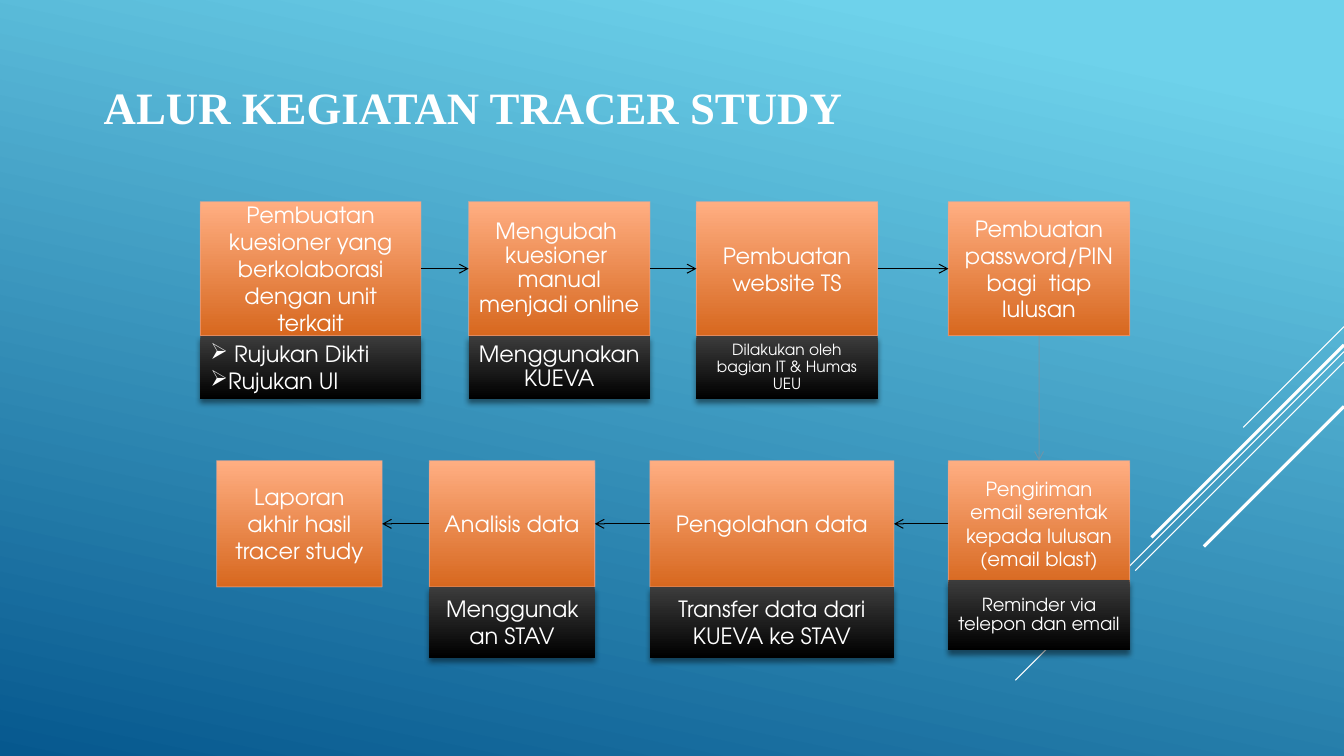
"""Build the slide showing the flow of tracer study activities."""
from dataclasses import dataclass
from typing import Optional

import lxml.etree
import pptx
import pptx.dml.color
import pptx.dml.fill
import pptx.enum.shapes
import pptx.enum.text
import pptx.oxml.ns
import pptx.shapes.autoshape
import pptx.shapes.connector
import pptx.slide
import pptx.util

Cm = pptx.util.Cm
Pt = pptx.util.Pt
RGBColor = pptx.dml.color.RGBColor
qn = pptx.oxml.ns.qn
Align = pptx.enum.text.PP_ALIGN

WHITE = RGBColor(0xFF, 0xFF, 0xFF)
BLACK = RGBColor(0x00, 0x00, 0x00)
CHARCOAL = RGBColor(0x3C, 0x3C, 0x3C)
PEACH = RGBColor(0xFF, 0xAE, 0x82)
ORANGE = RGBColor(0xD7, 0x68, 0x1F)
STEP_EDGE = RGBColor(0xEE, 0xA7, 0x8F)
FAINT_GREY = RGBColor(0x89, 0x91, 0x9C)
SKY = RGBColor(0x6E, 0xD2, 0xEB)
DEEP_BLUE = RGBColor(0x06, 0x58, 0x8E)

BODY_FONT = "TeX Gyre Adventor"
TITLE_FONT = "Times New Roman"
SLIDE_WIDTH = 33.87
SLIDE_HEIGHT = 19.05
TOP_SITE, LEFT_SITE, BOTTOM_SITE, RIGHT_SITE = range(4)


@dataclass(frozen=True)
class Ray:
    """A 45-degree decorative line running down from the right edge."""
    top: float
    reach: float
    weight: float


@dataclass(frozen=True)
class Note:
    """The dark label below a step."""
    lines: tuple[str, ...]
    size: float = 16
    spacing: float = 1.0
    bulleted: bool = False
    lift: float = 0


@dataclass(frozen=True)
class Step:
    """An activity with an optional note."""
    left: float
    width: float
    text: str
    size: float = 16
    spacing: float = 1.0
    note: Optional[Note] = None


@dataclass(frozen=True)
class Row:
    """A row of steps in flow order."""
    top: float
    height: float
    note_height: float
    exit_site: int
    entry_site: int
    steps: tuple[Step, ...]


RAYS = (
    Ray(8.23, 2.54, 0.75),
    Ray(8.86, 8.28, 0.75),
    Ray(9.12, 5.26, 0.75),
    Ray(8.69, 4.85, 2.25),
    Ray(10.24, 3.53, 2.25),
)

ROWS = (
    Row(5.08, 3.38, 1.6, RIGHT_SITE, LEFT_SITE, (
        Step(5.05, 5.56, "Pembuatan kuesioner yang berkolaborasi dengan unit terkait",
             note=Note((" Rujukan Dikti", "Rujukan UI"), bulleted=True)),
        Step(11.81, 4.57, "Mengubah  kuesioner  manual menjadi online", spacing=0.9,
             note=Note(("Menggunakan KUEVA",), spacing=0.9)),
        Step(17.55, 4.57, "Pembuatan website TS",
             note=Note(("Dilakukan oleh bagian IT & Humas UEU",), 11, 0.9)),
        Step(23.9, 4.57, "Pembuatan password/PIN bagi  tiap lulusan"),
    )),
    Row(11.61, 3.18, 1.78, LEFT_SITE, RIGHT_SITE, (
        Step(23.9, 4.57, "Pengiriman email serentak kepada lulusan (email blast)", 14,
             note=Note(("Reminder via telepon dan email",), 12.9, 0.9, lift=0.18)),
        Step(16.38, 6.15, "Pengolahan data",
             note=Note(("Transfer data dari KUEVA ke STAV",))),
        Step(10.82, 4.17, "Analisis data", note=Note(("Menggunakan STAV",))),
        Step(5.46, 4.17, "Laporan akhir hasil tracer study"),
    )),
)


def fill_gradient(fill: pptx.dml.fill.FillFormat, start: RGBColor, end: RGBColor,
                  angle: float = 270, start_position: float = 0) -> None:
    """Apply a two-colour linear gradient."""
    fill.gradient()
    fill.gradient_angle = angle
    first, last = fill.gradient_stops
    first.color.rgb, first.position = start, start_position
    last.color.rgb, last.position = end, 1


def fade_line(shape, percent: int) -> None:
    """Make the outline partly transparent."""
    color = shape.element.spPr.find(qn("a:ln")).find(".//" + qn("a:srgbClr"))
    lxml.etree.SubElement(color, qn("a:alpha"), val=str(percent * 1000))


def cast_shadow(shape: pptx.shapes.autoshape.Shape) -> None:
    """Add a soft shadow straight below the shape."""
    effects = shape.element.spPr.find(qn("a:effectLst"))
    shadow = lxml.etree.SubElement(effects, qn("a:outerShdw"), blurRad=str(Pt(4)),
                                   dist=str(Pt(3)), dir="5400000", rotWithShape="0")
    color = lxml.etree.SubElement(shadow, qn("a:srgbClr"), val=str(BLACK))
    lxml.etree.SubElement(color, qn("a:alpha"), val="46000")


def add_panel(slide: pptx.slide.Slide, left: float, top: float, width: float,
              height: float, lines: tuple[str, ...], size: float, spacing: float,
              colors: tuple[RGBColor, RGBColor],
              bulleted: bool = False) -> pptx.shapes.autoshape.Shape:
    """Draw a gradient rectangle with white text."""
    panel = slide.shapes.add_shape(pptx.enum.shapes.MSO_SHAPE.RECTANGLE,
                                   Cm(left), Cm(top), Cm(width), Cm(height))
    panel.shadow.inherit = False
    fill_gradient(panel.fill, *colors)
    frame = panel.text_frame
    frame.word_wrap = True
    frame.vertical_anchor = pptx.enum.text.MSO_ANCHOR.MIDDLE
    frame.text = "\n".join(lines)
    for paragraph in frame.paragraphs:
        paragraph.alignment = Align.LEFT if bulleted else Align.CENTER
        paragraph.line_spacing = spacing
        paragraph.font.name = BODY_FONT
        paragraph.font.size = Pt(size)
        paragraph.font.color.rgb = WHITE
        if bulleted:
            properties = paragraph._p.get_or_add_pPr()
            bullet = lxml.etree.Element(qn("a:buChar"), char="➢")
            properties.find(qn("a:defRPr")).addprevious(bullet)
    return panel


def add_step(slide: pptx.slide.Slide, row: Row,
             step: Step) -> pptx.shapes.autoshape.Shape:
    """Draw a step and its note, and return the step box."""
    box = add_panel(slide, step.left, row.top, step.width, row.height, (step.text,),
                    step.size, step.spacing, (PEACH, ORANGE))
    box.line.color.rgb = STEP_EDGE
    box.line.width = Pt(0.75)
    fade_line(box, 60)
    if step.note:
        note = step.note
        label = add_panel(slide, step.left, row.top + row.height - note.lift, step.width,
                          row.note_height, note.lines, note.size, note.spacing,
                          (CHARCOAL, BLACK), note.bulleted)
        label.line.fill.background()
        cast_shadow(label)
    return box


def add_line(slide: pptx.slide.Slide, start: tuple[float, float],
             end: tuple[float, float], color: RGBColor,
             weight: float) -> pptx.shapes.connector.Connector:
    """Draw a straight line without a shadow."""
    line = slide.shapes.add_connector(pptx.enum.shapes.MSO_CONNECTOR.STRAIGHT,
                                      *map(Cm, start + end))
    line.line.color.rgb = color
    line.line.width = Pt(weight)
    lxml.etree.SubElement(line.element.spPr, qn("a:effectLst"))
    return line


def add_arrow(slide: pptx.slide.Slide, source: pptx.shapes.autoshape.Shape,
              exit_site: int, target: pptx.shapes.autoshape.Shape, entry_site: int,
              color: RGBColor = BLACK) -> pptx.shapes.connector.Connector:
    """Join two steps with an arrow."""
    arrow = add_line(slide, (0, 0), (0, 0), color, 0.75)
    arrow.begin_connect(source, exit_site)
    arrow.end_connect(target, entry_site)
    lxml.etree.SubElement(arrow.element.spPr.find(qn("a:ln")), qn("a:tailEnd"), type="arrow")
    return arrow


def add_title(slide: pptx.slide.Slide) -> None:
    """Place and format the title."""
    title = slide.shapes.title
    title.left, title.top, title.width, title.height = map(Cm, (2.36, 0.84, 29.21, 3.68))
    frame = title.text_frame
    frame.text = "ALUR KEGIATAN TRACER STUDY"
    frame.auto_size = pptx.enum.text.MSO_AUTO_SIZE.NONE
    frame.vertical_anchor = pptx.enum.text.MSO_ANCHOR.MIDDLE
    heading = frame.paragraphs[0]
    heading.alignment = Align.LEFT
    heading.font.name = TITLE_FONT
    heading.font.size = Pt(32)
    heading.font.bold = True
    heading.font.color.rgb = WHITE


def main() -> None:
    """Build and save the presentation."""
    deck = pptx.Presentation()
    deck.slide_width, deck.slide_height = Cm(SLIDE_WIDTH), Cm(SLIDE_HEIGHT)
    slide = deck.slides.add_slide(deck.slide_layouts[5])
    fill_gradient(slide.background.fill, SKY, DEEP_BLUE, 258, 0.1)
    add_title(slide)
    for ray in RAYS:
        add_line(slide, (SLIDE_WIDTH, ray.top),
                 (SLIDE_WIDTH - ray.reach, ray.top + ray.reach), WHITE, ray.weight)
    flow = [[add_step(slide, row, step) for step in row.steps] for row in ROWS]
    for row, boxes in zip(ROWS, flow):
        for source, target in zip(boxes, boxes[1:]):
            add_arrow(slide, source, row.exit_site, target, row.entry_site)
    turn = add_arrow(slide, flow[0][-1], BOTTOM_SITE, flow[1][0], TOP_SITE, FAINT_GREY)
    fade_line(turn, 60)
    deck.save("out.pptx")


if __name__ == "__main__":
    main()
